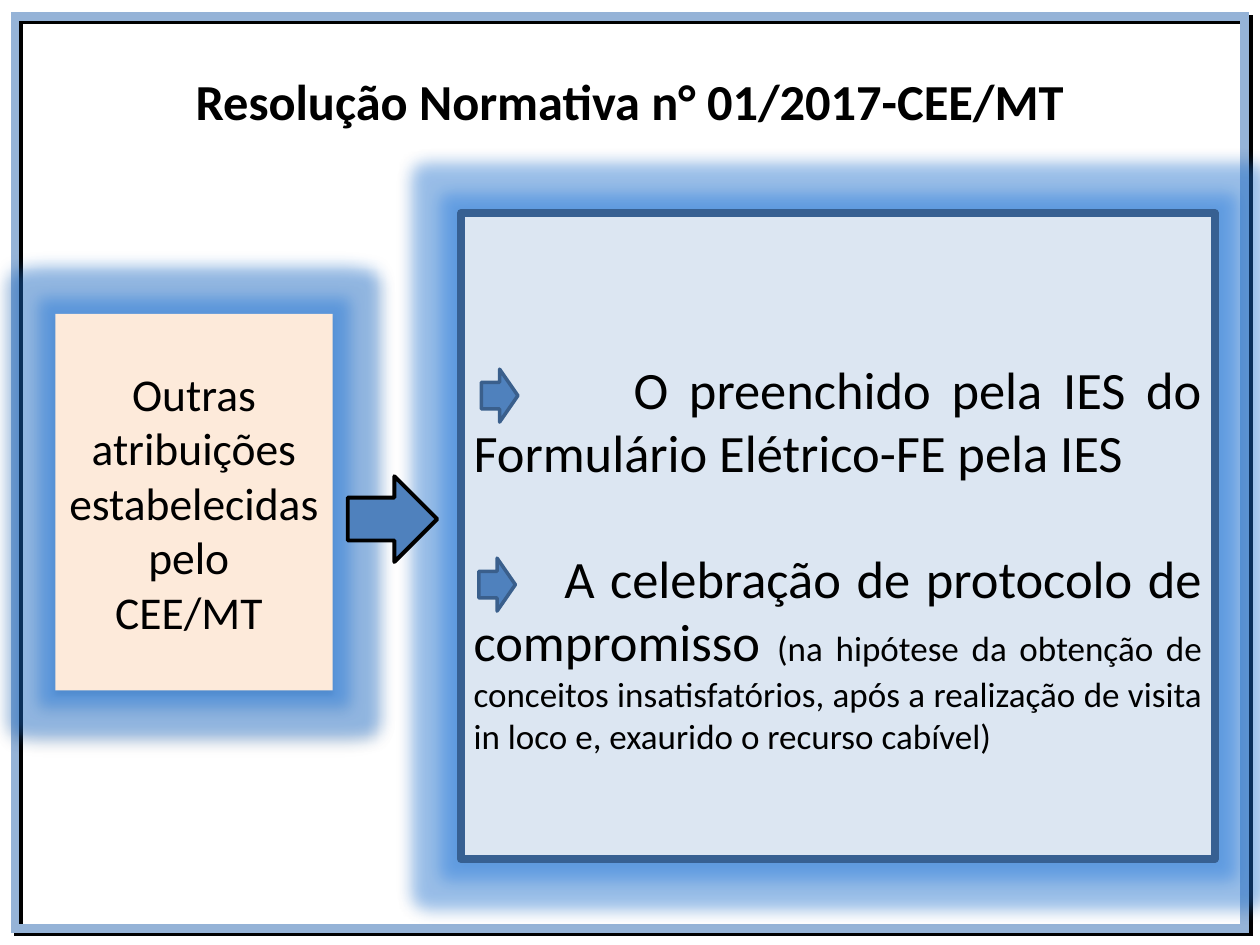
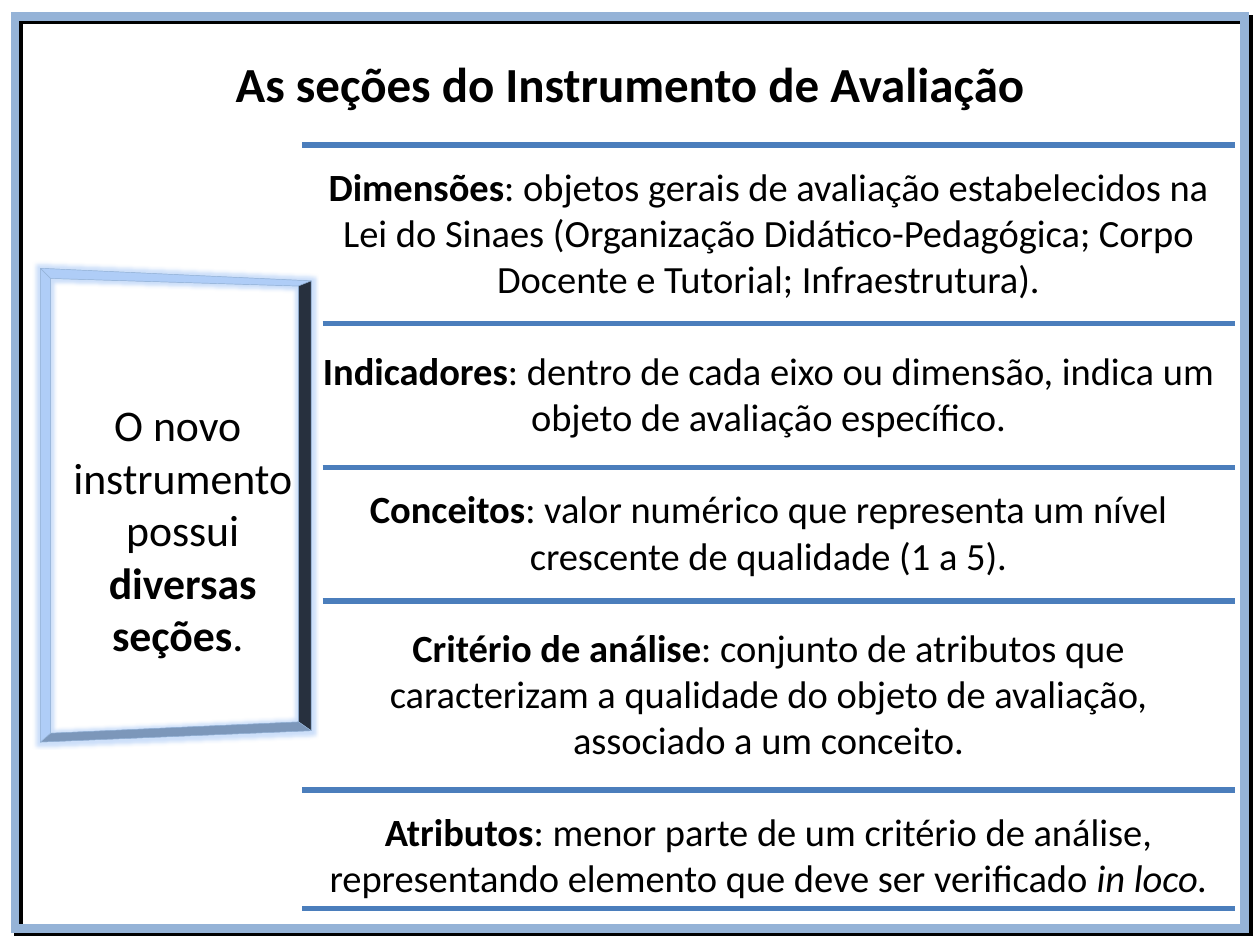
from dataclasses import dataclass
from itertools import pairwise

from lxml import etree
from pptx import Presentation
from pptx.dml.color import RGBColor
from pptx.enum.shapes import MSO_CONNECTOR as Connector, MSO_SHAPE as Shape
from pptx.enum.text import MSO_ANCHOR as Anchor, PP_ALIGN as Align
from pptx.oxml import parse_xml
from pptx.oxml.ns import nsdecls, qn
from pptx.util import Inches, Pt


@dataclass(frozen=True)
class Theme:
    font: str = "Calibri"
    black: str = "000000"
    frame: str = "95B3D7"
    peach: str = "FDEADA"
    pale_blue: str = "DCE6F2"
    navy: str = "376092"
    arrow: str = "4F81BD"
    arrow_edge: str = "3A5F8C"
    rule: str = "4B7EBC"
    deep_glow: str = "1E7AE4"
    light_glow: str = "82B0F2"
    wall_light: str = "AFCDF7"
    wall_mid: str = "7C97BA"
    wall_dark: str = "27303E"
    item: int = 30
    note: int = 20
    source: int = 26
    intro: int = 25
    section: int = 22


theme = Theme()


def style(shape, fill=None, line=None, width=1, glow=None, shadow=None):
    """Glow is (colour, inches); shadow is (opacity %, blur, distance, degrees)."""
    if fill:
        shape.fill.solid()
        shape.fill.fore_color.rgb = RGBColor.from_string(fill)
    else:
        shape.fill.background()
    if line:
        shape.line.color.rgb = RGBColor.from_string(line)
        shape.line.width = Pt(width)
    else:
        shape.line.fill.background()
    shape.shadow.inherit = False
    effects = shape._element.spPr.find(qn("a:effectLst"))
    if glow:
        color, radius = glow
        effects.append(parse_xml(
            f'<a:glow {nsdecls("a")} rad="{Inches(radius)}"><a:srgbClr val="{color}">'
            '<a:alpha val="40000"/></a:srgbClr></a:glow>'))
    if shadow:
        opacity, blur, distance, angle = shadow
        effects.append(parse_xml(
            f'<a:outerShdw {nsdecls("a")} blurRad="{Pt(blur)}" dist="{Pt(distance)}" '
            f'dir="{angle * 60000}" algn="tl" rotWithShape="0"><a:srgbClr val="{theme.black}">'
            f'<a:alpha val="{opacity * 1000}"/></a:srgbClr></a:outerShdw>'))
    return shape


def write(shape, *paragraphs, size, bold=False, align=Align.CENTER, indents=(), gap=0, top=0.05):
    """Each paragraph is a list of (text, overrides) runs."""
    frame = shape.text_frame
    frame.word_wrap = True
    frame.vertical_anchor = Anchor.MIDDLE
    frame.margin_top = Inches(top)
    for index, runs in enumerate(paragraphs):
        paragraph = frame.add_paragraph() if index else frame.paragraphs[0]
        paragraph.alignment = align
        if index:
            paragraph.space_before = Pt(gap)
        if indents:
            paragraph._p.get_or_add_pPr().set("indent", str(Inches(indents[index])))
        for text, changes in runs:
            run = paragraph.add_run()
            run.text = text
            font = run.font
            font.name = theme.font
            font.size = Pt(changes.get("size", size))
            font.bold = changes.get("bold", bold)
            font.italic = changes.get("italic", False)
            font.color.rgb = RGBColor.from_string(theme.black)


prs = Presentation()
prs.slide_width, prs.slide_height = Inches(10), Inches(7.5)

# Both slides: title and framed border
slides = []
for title, title_size, title_top in (
    ("Resolução Normativa n° 01/2017-CEE/MT", 28.8, 0.45),
    ("As seções do Instrumento de Avaliação", 28, 0.31),
):
    slide = prs.slides.add_slide(prs.slide_layouts[6])
    heading = slide.shapes.add_textbox(Inches(0.5), Inches(title_top), Inches(9), Inches(0.7))
    write(heading, [(title, {})], size=title_size, bold=True)
    border = slide.shapes.add_shape(
        Shape.RECTANGLE, Inches(0.12), Inches(0.13), Inches(9.76), Inches(7.24))
    style(border, line=theme.frame, width=5, shadow=(100, 0, 2.8, 45))
    etree.SubElement(border.line._ln, qn("a:miter"), lim="800000")
    slides.append(slide)
resolution, sections = slides

# Slide 1: duties set by the council
source = resolution.shapes.add_shape(
    Shape.RECTANGLE, Inches(0.44), Inches(2.49), Inches(2.2), Inches(2.99))
style(source, theme.peach, glow=(theme.deep_glow, 0.25), shadow=(32, 3.5, 2.2, 90))
write(source, [("Outras atribuições estabelecidas pelo ", {})], [("CEE/MT ", {})],
      size=theme.source)

duties = resolution.shapes.add_shape(
    Shape.RECTANGLE, Inches(3.66), Inches(1.69), Inches(5.98), Inches(5.13))
style(duties, theme.pale_blue, theme.navy, 4.5,
      glow=(theme.deep_glow, 0.25), shadow=(20, 6, 0, 225))
write(
    duties,
    [("O preenchido pela IES do Formulário Elétrico-FE pela IES", {})],
    [("A celebração de protocolo de compromisso ", {}),
     ("(na hipótese da obtenção de conceitos insatisfatórios, após a realização de visita "
      "in loco e, exaurido o recurso cabível)", {"size": theme.note})],
    size=theme.item, align=Align.JUSTIFY, indents=(1.27, 0.72), gap=36, top=0.38)

for left, top, width, height, edge, edge_width in (
    (2.76, 3.78, 0.71, 0.68, theme.black, 2.25),
    (3.82, 2.93, 0.29, 0.42, theme.arrow_edge, 2),
    (3.8, 4.43, 0.29, 0.42, theme.arrow_edge, 2),
):
    arrow = resolution.shapes.add_shape(
        Shape.RIGHT_ARROW, Inches(left), Inches(top), Inches(width), Inches(height))
    style(arrow, theme.arrow, edge, edge_width)

# Slide 2: open box in perspective, corners clockwise from top left, in hundredths of an inch
outer = [(32, 213), (247, 223), (247, 580), (32, 589)]
inner = [(40, 221), (237, 227), (237, 573), (40, 582)]
walls = [
    ([outer[i], outer[(i + 1) % 4], inner[(i + 1) % 4], inner[i]], color, None)
    for i, color in enumerate(
        (theme.wall_light, theme.wall_dark, theme.wall_mid, theme.wall_light))
]
glow = (theme.light_glow, 0.06)
for corners, color, halo in [(inner, None, glow), (outer, None, glow), *walls]:
    builder = sections.shapes.build_freeform(*corners[0], scale=Inches(0.01))
    builder.add_line_segments(corners[1:], close=True)
    style(builder.convert_to_shape(), color, theme.frame, 0.25, halo)

intro = sections.shapes.add_textbox(Inches(0.35), Inches(2.7), Inches(2.2), Inches(3))
write(
    intro,
    [("O novo ", {})],
    [("instrumento possui ", {}), ("diversas seções", {"bold": True}), (". ", {})],
    size=theme.intro)

# Section descriptions, each centred between two rules
right = 9.8
rules = [(1.15, 2.4), (2.57, 2.56), (3.71, 2.56), (4.77, 2.56), (6.27, 2.4), (7.21, 2.4)]
descriptions = [
    ("Dimensões", ": objetos gerais de avaliação estabelecidos na Lei do Sinaes "
     "(Organização Didático-Pedagógica; Corpo Docente e Tutorial; Infraestrutura).", "", -0.02),
    ("Indicadores", ": dentro de cada eixo ou dimensão, indica um objeto de avaliação "
     "específico.", "", -0.02),
    ("Conceitos", ": valor numérico que representa um nível crescente de qualidade (1 a 5).",
     "", -0.02),
    ("Critério de análise", ": conjunto de atributos que caracterizam a qualidade do objeto "
     "de avaliação, associado a um conceito.", "", -0.02),
    ("Atributos", ": menor parte de um critério de análise, representando elemento que deve "
     "ser verificado ", "in loco.", 0.04),
]
for ((top, _), (bottom, _)), (term, meaning, latin, shift) in zip(pairwise(rules), descriptions):
    section = sections.shapes.add_textbox(
        Inches(2.4), Inches(top + shift), Inches(right - 2.4), Inches(bottom - top))
    runs = [(term, {"bold": True}), (meaning, {})]
    if latin:
        runs.append((latin, {"italic": True}))
    write(section, runs, size=theme.section)

for height, left in rules:
    rule = sections.shapes.add_connector(
        Connector.STRAIGHT, Inches(left), Inches(height), Inches(right), Inches(height))
    rule.line.color.rgb = RGBColor.from_string(theme.rule)
    rule.line.width = Pt(3)
    etree.SubElement(rule._element.spPr, qn("a:effectLst"))

prs.save("out.pptx")
